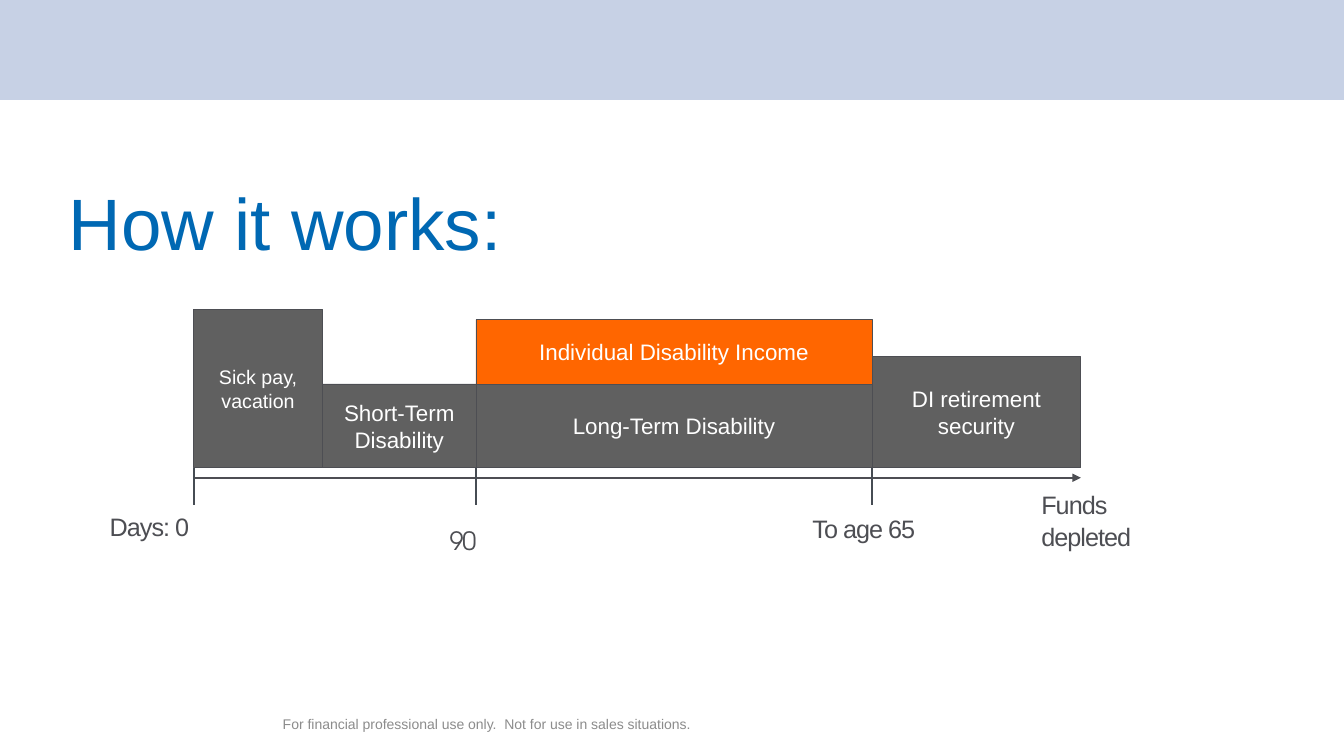
from dataclasses import dataclass

from lxml import etree
from pptx import Presentation
from pptx.dml.color import RGBColor
from pptx.enum.shapes import MSO_CONNECTOR, MSO_SHAPE
from pptx.enum.text import MSO_ANCHOR, MSO_AUTO_SIZE, PP_ALIGN
from pptx.oxml.ns import qn
from pptx.util import Inches, Pt

RECT, STRAIGHT = MSO_SHAPE.RECTANGLE, MSO_CONNECTOR.STRAIGHT
TOP, MIDDLE = MSO_ANCHOR.TOP, MSO_ANCHOR.MIDDLE
LEFT, CENTER = PP_ALIGN.LEFT, PP_ALIGN.CENTER


@dataclass(frozen=True)
class Theme:
    font: str = "Arial"
    number_font: str = "TeX Gyre Adventor"
    band: str = "C7D1E5"
    title: str = "0068B3"
    block: str = "606060"
    accent: str = "FF6600"
    outline: str = "4D4E53"
    tick: str = "464C53"
    light: str = "FFFFFF"
    footer: str = "8C8C8C"
    title_size: int = 52
    label_size: int = 18
    block_size: int = 16
    small_size: int = 14
    footer_size: int = 10


T = Theme()


def write(sp, lines, size, color, align=CENTER, anchor=MIDDLE, font=T.font, tight=False):
    """Fill a shape with one paragraph per line; tight narrows the letter spacing."""
    tf = sp.text_frame
    tf.word_wrap = True
    tf.auto_size = MSO_AUTO_SIZE.NONE
    tf.vertical_anchor = anchor
    for i, line in enumerate(lines):
        p = tf.add_paragraph() if i else tf.paragraphs[0]
        p.alignment = align
        r = p.add_run()
        r.text = line
        r.font.size = Pt(size)
        r.font.name = font
        r.font.color.rgb = RGBColor.from_string(color)
        if tight:
            r.font._element.set("spc", "-70")
            if i:
                p.space_before = Pt(1.4)
    return tf


def add_line(x1, y1, x2, y2, color):
    line = s.shapes.add_connector(STRAIGHT, Inches(x1), Inches(y1), Inches(x2), Inches(y2))
    line.line.color.rgb = RGBColor.from_string(color)
    line.line.width = Pt(1.5)
    etree.SubElement(line._element.spPr, qn("a:effectLst"))
    return line


prs = Presentation()
prs.slide_width, prs.slide_height = Inches(13.33), Inches(7.5)
s = prs.slides.add_slide(prs.slide_layouts[5])

# Header band
band = s.shapes.add_shape(RECT, 0, 0, prs.slide_width, Inches(0.99))
band.shadow.inherit = False
band.fill.solid()
band.fill.fore_color.rgb = RGBColor.from_string(T.band)
band.line.fill.background()

# Title and footer
title = s.shapes.title
title.left, title.top, title.width, title.height = map(Inches, (0.16, 1.96, 5.54, 0.58))
write(title, ["How it works: "], T.title_size, T.title).paragraphs[0].line_spacing = 0.9

footer = s.shapes.add_textbox(*map(Inches, (2.17, 7.03, 5.31, 0.3)))
write(footer, ["For financial professional use only.  Not for use in sales situations."],
      T.footer_size, T.footer)

# Timeline columns and rows
DAY_0, SICK_END, DAY_90, AGE_65, DEPLETED = 1.92, 3.2, 4.72, 8.65, 10.72
BASE, LTD_TOP, AXIS, TICK_END = 4.64, 3.81, 4.74, 5.01

# Arrow along the timeline
axis = add_line(DAY_0, AXIS, DEPLETED, AXIS, T.outline)
etree.SubElement(axis.line._get_or_add_ln(), qn("a:tailEnd"), type="triangle")

# Income blocks: left, right, top, bottom, lines, size, fill
blocks = [
    (DAY_0, SICK_END, 3.07, BASE, ["Sick pay,", "vacation"], T.small_size, T.block),
    (SICK_END, DAY_90, LTD_TOP, BASE, ["Short-Term Disability"], T.block_size, T.block),
    (DAY_90, AGE_65, LTD_TOP, BASE, ["Long-Term Disability"], T.block_size, T.block),
    (DAY_90, AGE_65, 3.17, LTD_TOP, ["Individual Disability Income"], T.block_size, T.accent),
    (AGE_65, DEPLETED, 3.54, BASE, ["DI retirement security"], T.block_size, T.block),
]
for left, right, top, bottom, lines, size, fill in blocks:
    sp = s.shapes.add_shape(RECT, *map(Inches, (left, top, right - left, bottom - top)))
    sp.shadow.inherit = False
    sp.fill.solid()
    sp.fill.fore_color.rgb = RGBColor.from_string(fill)
    sp.line.color.rgb = RGBColor.from_string(T.outline)
    sp.line.width = Pt(0.5)
    write(sp, lines, size, T.light)

# Ticks
for x in (DAY_0, DAY_90, AGE_65):
    add_line(x, BASE, x, TICK_END, T.tick)

# Labels: left, top, width, height, lines, font
labels = [
    (0.99, 5.02, 1.27, 0.45, ["Days: 0"], T.font),
    (4.36, 5.16, 0.51, 0.54, ["90"], T.number_font),
    (7.96, 5.04, 1.34, 0.54, ["To age 65"], T.font),
    (10.23, 4.8, 1.19, 0.95, ["Funds", "depleted"], T.font),
]
for *box, lines, font in labels:
    sp = s.shapes.add_textbox(*map(Inches, box))
    tf = write(sp, lines, T.label_size, T.outline, LEFT, TOP, font, tight=True)
    tf.word_wrap = False

prs.save("out.pptx")
